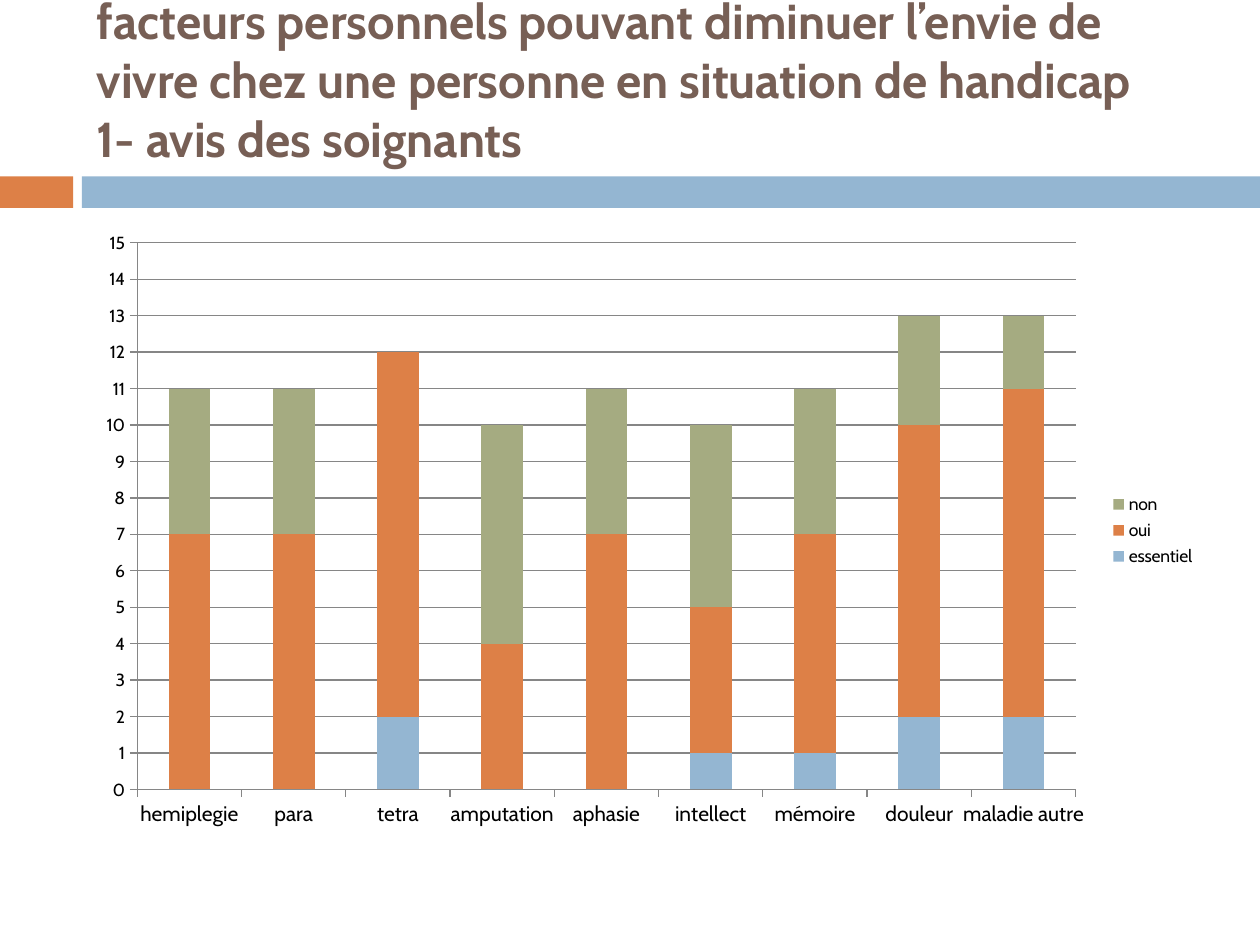
import pptx
import pptx.util
import pptx.chart.data
import pptx.dml.color
import pptx.enum.chart
import pptx.enum.shapes
import pptx.enum.text
import pptx.oxml
from pptx.oxml.ns import nsdecls, qn

Inches, Pt = pptx.util.Inches, pptx.util.Pt
RGBColor = pptx.dml.color.RGBColor

BLUE = RGBColor(0x94, 0xB6, 0xD2)
ORANGE = RGBColor(0xDD, 0x80, 0x47)
GREEN = RGBColor(0xA5, 0xAB, 0x81)
BROWN = RGBColor(0x77, 0x5F, 0x55)
GREY = RGBColor(0x86, 0x86, 0x86)
BLACK = RGBColor(0, 0, 0)
FONT = "Cabin"

TITLE = ("facteurs personnels pouvant diminuer l’envie de vivre chez "
         "une personne en situation de handicap\v1- avis des soignants")
CATS = ["hemiplegie", "para", "tetra", "amputation", "aphasie",
        "intellect", "mémoire", "douleur", "maladie autre"]
SERIES = [
    ("essentiel", BLUE, [0, 0, 2, 0, 0, 1, 1, 2, 2]),
    ("oui", ORANGE, [7, 7, 10, 4, 7, 4, 6, 8, 9]),
    ("non", GREEN, [4, 4, 0, 6, 4, 5, 4, 3, 2]),
]
WIDTH, HEIGHT = 10, 7.5
LEFT = 0.67
BAND_TOP, BAND_H = 1.4, 0.25
BANDS = [(0, 0.58, ORANGE), (0.65, WIDTH - 0.65, BLUE)]
PLOT = {"x": 0.047, "y": 0.036, "w": 0.835, "h": 0.882}  # shares of the chart


def style(font, size, color, bold=False):
    font.name, font.size, font.bold = FONT, Pt(size), bold
    font.color.rgb = color


def add_band(slide, left, width, color):
    band = slide.shapes.add_shape(
        pptx.enum.shapes.MSO_SHAPE.RECTANGLE,
        *map(Inches, (left, BAND_TOP, width, BAND_H)))
    band.shadow.inherit = False
    band.fill.solid()
    band.fill.fore_color.rgb = color
    band.line.fill.background()


def add_title(slide):
    box = slide.shapes.add_textbox(*map(Inches, (LEFT, 0, 9, 1.25)))
    frame = box.text_frame
    frame.word_wrap = True
    frame.vertical_anchor = pptx.enum.text.MSO_ANCHOR.MIDDLE
    frame.text = TITLE
    style(frame.paragraphs[0].font, 28, BROWN, bold=True)


def place_plot(chart):
    """Fix the inner plot area at the shares given in PLOT."""
    area = chart._chartSpace.find(".//" + qn("c:plotArea"))
    for old in area.findall(qn("c:layout")):
        area.remove(old)
    parts = "".join(f'<c:{key}Mode val="edge"/>' for key in "xy")
    parts += "".join(f'<c:{key} val="{val}"/>' for key, val in PLOT.items())
    area.insert(0, pptx.oxml.parse_xml(
        f'<c:layout {nsdecls("c")}><c:manualLayout>'
        f'<c:layoutTarget val="inner"/>{parts}</c:manualLayout></c:layout>'))


def add_chart(slide):
    data = pptx.chart.data.CategoryChartData()
    data.categories = CATS
    for name, _, vals in SERIES:
        data.add_series(name, vals)
    kinds = pptx.enum.chart
    chart = slide.shapes.add_chart(
        kinds.XL_CHART_TYPE.COLUMN_STACKED,
        *map(Inches, (LEFT, 1.75, 8.92, 4.92)), data).chart
    style(chart.font, 10, BLACK)
    chart.has_title = False
    chart.has_legend = True
    chart.legend.position = kinds.XL_LEGEND_POSITION.RIGHT
    chart.legend.include_in_layout = False

    plot = chart.plots[0]
    plot.vary_by_categories = False
    plot.overlap, plot.gap_width = 100, 150
    for bars, (_, color, _) in zip(plot.series, SERIES):
        bars.format.fill.solid()
        bars.format.fill.fore_color.rgb = color

    value = chart.value_axis
    value.minimum_scale, value.maximum_scale, value.major_unit = 0, 15, 1
    value.has_major_gridlines = True
    for axis, size in ((chart.category_axis, 12), (value, 10)):
        axis.major_tick_mark = kinds.XL_TICK_MARK.OUTSIDE
        axis.format.line.color.rgb = GREY
        style(axis.tick_labels.font, size, BLACK)
    value.major_gridlines.format.line.color.rgb = GREY
    place_plot(chart)


def main():
    deck = pptx.Presentation()
    deck.slide_width, deck.slide_height = Inches(WIDTH), Inches(HEIGHT)
    slide = deck.slides.add_slide(deck.slide_layouts[6])
    for band in BANDS:
        add_band(slide, *band)
    add_title(slide)
    add_chart(slide)
    deck.save("out.pptx")


if __name__ == "__main__":
    main()
